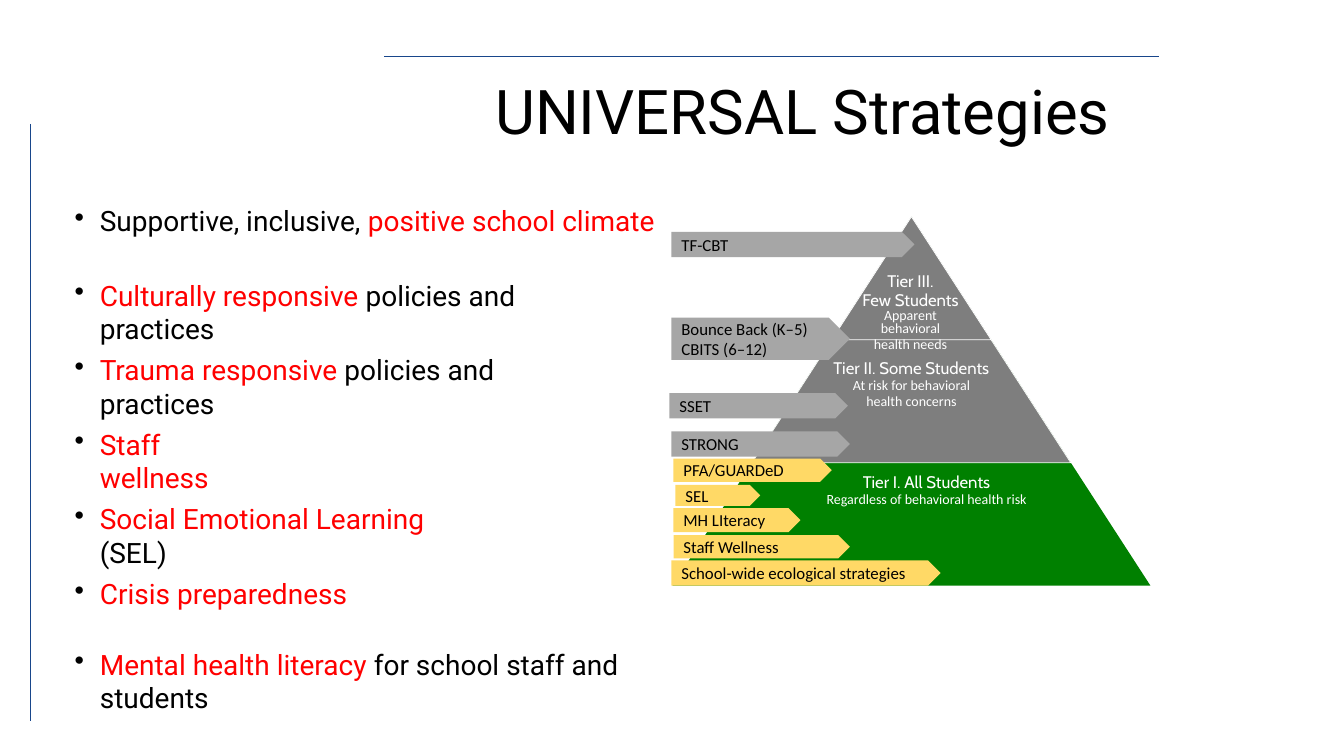
from lxml import etree
from pptx import Presentation
from pptx import util as u
from pptx.dml.color import RGBColor
from pptx.enum import shapes, text
from pptx.oxml.ns import qn

COLORS = {
    "black": "000000", "white": "FFFFFF", "red": "FF0000", "rule": "18468B",
    "green": "008000", "grey": "7E7E7E", "silver": "A6A6A6", "yellow": "FFD966",
}


def color(name):
    return RGBColor.from_string(COLORS[name])


def assign(target, values):
    for name, value in values.items():
        setattr(target, name, value)


class SlideBuilder:
    """Holds the style and the current slide."""

    body_font, label_font, tier_font = "Roboto", "Calibri", "Cabin"

    def __init__(self, page):
        self.page = page

    def frame(self, box, top=0, left=0, anchor=text.MSO_ANCHOR.TOP):
        frame = box.text_frame
        assign(frame, {
            "word_wrap": True, "vertical_anchor": anchor,
            "auto_size": text.MSO_AUTO_SIZE.NONE,
            "margin_left": u.Inches(left), "margin_top": u.Inches(top),
            "margin_right": 0, "margin_bottom": 0,
        })
        return frame

    def text_box(self, left, top, width, height, inset):
        box = self.page.shapes.add_textbox(*map(u.Inches, (left, top, width, height)))
        return self.frame(box, inset)

    def paragraph(self, frame, first):
        return frame.paragraphs[0] if first else frame.add_paragraph()

    def span(self, para, words, font, size, tint):
        span = para.add_run()
        span.text = words
        assign(span.font, {"name": font, "size": u.Pt(size), "bold": False})
        span.font.color.rgb = color(tint)

    def rule(self, *ends):
        line = self.page.shapes.add_connector(
            shapes.MSO_CONNECTOR.STRAIGHT, *map(u.Inches, ends))
        line.line.color.rgb = color("rule")
        line.line.width = u.Pt(0.5)
        etree.SubElement(line._element.spPr, qn("a:effectLst"))

    def title(self, words):
        title = self.page.shapes.title
        places = (0.67, 0.64, 11.99, 1.03)
        assign(title, dict(zip(("left", "top", "width", "height"), map(u.Inches, places))))
        para = self.frame(title, top=0.08, left=4.24).paragraphs[0]
        para.alignment = text.PP_ALIGN.LEFT
        para.line_spacing = 1.0
        self.span(para, words, self.body_font, 44, "black")

    def bullets(self, top, width, height, items, gap=0):
        frame = self.text_box(0.73, top, width, height, 0.03)
        for index, spans in enumerate(items):
            para = self.paragraph(frame, index == 0)
            props = para._p.get_or_add_pPr()
            props.set("marL", str(u.Inches(0.26)))
            props.set("indent", str(u.Inches(-0.25)))
            tint = etree.SubElement(props, qn("a:buClr"))
            etree.SubElement(tint, qn("a:srgbClr"), val=COLORS["black"])
            etree.SubElement(props, qn("a:buChar"), char="•")
            if index:
                para.space_before = u.Pt(gap)
            for words, name in spans:
                self.span(para, words, self.body_font, 20, name)

    def shape(self, kind, places, fill):
        shape = self.page.shapes.add_shape(kind, *map(u.Inches, places))
        shape.shadow.inherit = False
        shape.fill.solid()
        shape.fill.fore_color.rgb = color(fill)
        shape.line.fill.background()
        return shape

    def triangle(self, apex, top, width, height, fill, outlined):
        shape = self.shape(shapes.MSO_SHAPE.ISOSCELES_TRIANGLE,
                           (apex - width / 2, top, width, height), fill)
        if outlined:
            shape.line.color.rgb = color("white")
            shape.line.width = u.Pt(0.5)

    def tier(self, places, inset, heading, pitch, details):
        frame = self.text_box(*places, inset)
        rows = [(heading, self.tier_font, 12, pitch)]
        rows += [(words, self.label_font, 10, step) for words, step in details]
        for index, (words, font, size, step) in enumerate(rows):
            para = self.paragraph(frame, index == 0)
            assign(para, {"alignment": text.PP_ALIGN.CENTER, "line_spacing": u.Pt(step)})
            for number, part in enumerate(words.split("\n")):
                if number:
                    para.add_line_break()
                self.span(para, part, font, size, "white")

    def arrow(self, words, left, top, width, height, fill):
        shape = self.shape(shapes.MSO_SHAPE.PENTAGON, (left, top, width, height), fill)
        frame = self.frame(shape, left=0.1, anchor=text.MSO_ANCHOR.MIDDLE)
        para = frame.paragraphs[0]
        para.alignment = text.PP_ALIGN.LEFT
        self.span(para, words, self.label_font, 12, "black")


def main():
    deck = Presentation()
    deck.slide_width, deck.slide_height = u.Inches(13.33), u.Inches(7.5)
    slide = SlideBuilder(deck.slides.add_slide(deck.slide_layouts[5]))

    # Rules and title
    slide.rule(3.81, 0.56, 11.5, 0.56)
    slide.rule(0.3, 1.23, 0.3, 7.15)
    slide.title("UNIVERSAL Strategies")

    # Strategy list
    policies = ("policies and practices", "black")
    strategies = [
        (1.99, 6.51, 0.36, [[("Supportive, inclusive, ", "black"),
                             ("positive school climate", "red")]]),
        (2.73, 5.51, 0.7, [[("Culturally responsive ", "red"), policies]]),
        (3.47, 5.25, 0.7, [[("Trauma responsive ", "red"), policies]]),
        (4.21, 1.92, 0.7, [[("Staff wellness", "red")]]),
        (4.95, 4.1, 0.7, [[("Social Emotional Learning ", "red"), ("(SEL)", "black")]]),
        (5.69, 6.49, 1.4, [[("Crisis preparedness", "red")],
                           [("Mental health literacy ", "red"),
                            ("for school staff and students", "black")]]),
    ]
    for top, width, height, items in strategies:
        slide.bullets(top, width, height, items, gap=26.5)

    # Pyramid: nested triangles sharing one apex, one third apart
    for thirds, fill in ((3, "green"), (2, "grey"), (1, "grey")):
        slide.triangle(9.04, 2.15, 1.58 * thirds, 1.22 * thirds, fill, thirds < 3)

    # Tier captions
    slide.tier((8.18, 4.67, 2.02, 0.37), 0.02, "Tier I. All Students", 13.7,
               [("Regardless of behavioral health risk", 11.2)])
    slide.tier((8.24, 3.54, 1.6, 0.52), 0.02, "Tier II. Some Students", 13.7,
               [("At risk for behavioral", 10.7), ("health concerns", 11.4)])
    slide.tier((8.44, 2.63, 1.18, 0.7), 0.08, "Tier III.\nFew Students", 13,
               [("Apparent\nbehavioral", 9.7), ("health needs", 11.4)])

    # Programme arrows
    arrows = [
        ("TF-CBT", 6.66, 2.3, 2.41, 0.25, "silver"),
        ("Bounce Back (K–5) CBITS (6–12)", 6.66, 3.15, 1.77, 0.42, "silver"),
        ("SSET", 6.64, 3.9, 1.77, 0.25, "silver"),
        ("STRONG", 6.66, 4.28, 1.77, 0.25, "silver"),
        ("PFA/GUARDeD", 6.68, 4.55, 1.57, 0.23, "yellow"),
        ("SEL", 6.7, 4.81, 0.84, 0.21, "yellow"),
        ("MH LIteracy", 6.68, 5.04, 1.26, 0.24, "yellow"),
        ("Staff Wellness", 6.68, 5.31, 1.75, 0.23, "yellow"),
        ("School-wide ecological strategies", 6.66, 5.56, 2.67, 0.25, "yellow"),
    ]
    for arrow in arrows:
        slide.arrow(*arrow)

    deck.save("out.pptx")


if __name__ == "__main__":
    main()
